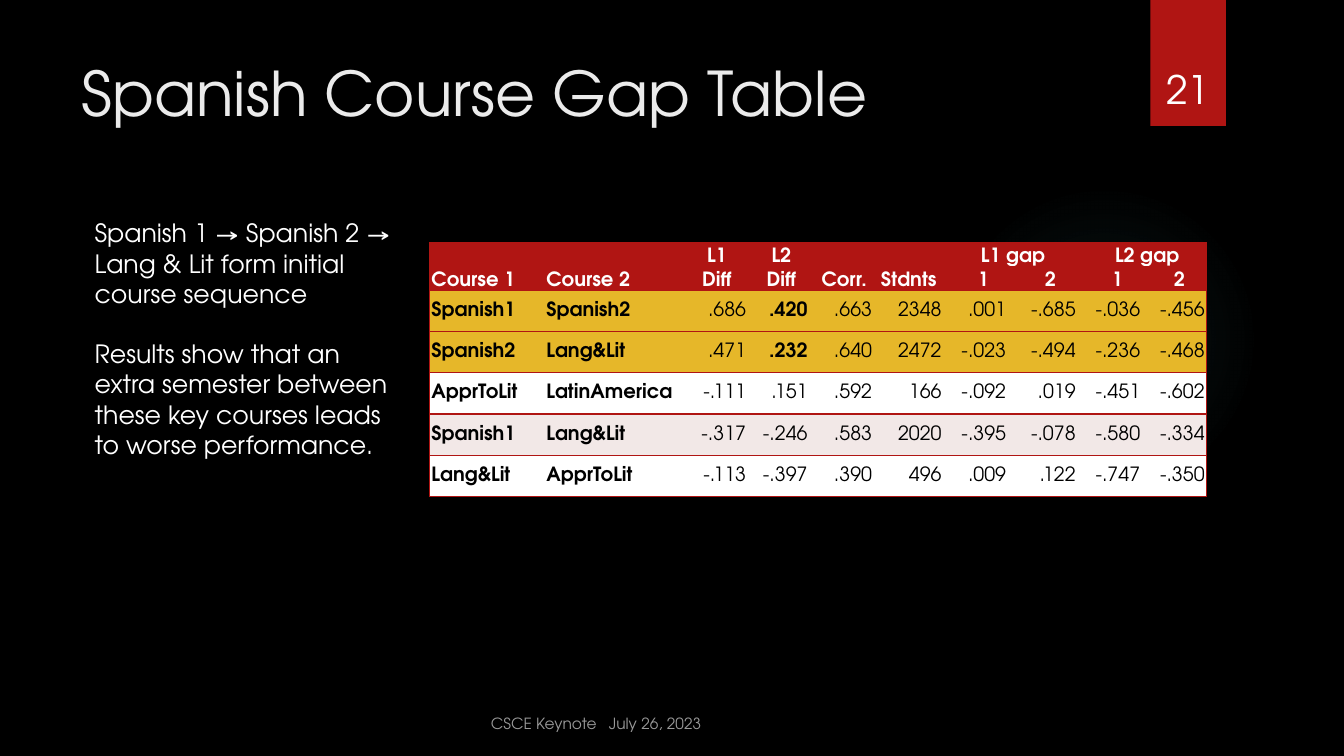
"""Build the Spanish Course Gap Table slide."""
from lxml import etree
from pptx import Presentation
from pptx.dml.color import RGBColor
from pptx.enum.shapes import MSO_SHAPE
from pptx.enum.text import MSO_ANCHOR, PP_ALIGN
from pptx.oxml import parse_xml
from pptx.oxml.ns import nsdecls, qn
from pptx.util import Inches, Pt

LEFT, CENTER, RIGHT = PP_ALIGN.LEFT, PP_ALIGN.CENTER, PP_ALIGN.RIGHT
TOP, MIDDLE, BOTTOM = MSO_ANCHOR.TOP, MSO_ANCHOR.MIDDLE, MSO_ANCHOR.BOTTOM
FONT = "TeX Gyre Adventor"
BLACK = RGBColor(0x00, 0x00, 0x00)
WHITE = RGBColor(0xFF, 0xFF, 0xFF)
OFF_WHITE = RGBColor(0xEB, 0xEB, 0xEB)
GRAY = RGBColor(0x99, 0x99, 0x99)
RED = RGBColor(0xB0, 0x15, 0x13)
GOLD = RGBColor(0xE6, 0xB7, 0x29)
PINK = RGBColor(0xF2, 0xE8, 0xE7)
GLOW_COLOR = RGBColor(0x50, 0xB9, 0xC1)
GLOW_STOPS = [(0, 7), (36, 6), (69, 0)]

TITLE = "Spanish Course Gap Table"
SLIDE_NUMBER = "21"
FOOTER = "CSCE Keynote\tJuly 26, 2023"
FOOTER_TAB = 1.17
FINDINGS = [
    "Spanish 1 → Spanish 2 → Lang & Lit form initial course sequence",
    "Results show that an extra semester between these key courses leads to worse performance.",
]
HEADERS = [
    ["", "", "L1", "L2", "", "", "L1 gap", "", "L2 gap", ""],
    ["Course 1", "Course 2", "Diff", "Diff", "Corr.", "Stdnts", "1", "2", "1", "2"],
]
HEADER_SHIFTS = [
    [0, 0, 1, 1, 0, 0, 1, 0, 2, 0],
    [0, 0, 1, 1, 1, 0, 3, 3, 3, 2],
]
COURSES = [
    ["Spanish1", "Spanish2", ".686", ".420", ".663", "2348", ".001", "-.685", "-.036", "-.456"],
    ["Spanish2", "Lang&Lit", ".471", ".232", ".640", "2472", "-.023", "-.494", "-.236", "-.468"],
    ["ApprToLit", "LatinAmerica", "-.111", ".151", ".592", "166", "-.092", ".019", "-.451", "-.602"],
    ["Spanish1", "Lang&Lit", "-.317", "-.246", ".583", "2020", "-.395", "-.078", "-.580", "-.334"],
    ["Lang&Lit", "ApprToLit", "-.113", "-.397", ".390", "496", ".009", ".122", "-.747", "-.350"],
]
COURSE_FILLS = [GOLD, GOLD, WHITE, PINK, WHITE]
HIGHLIGHTS = {".420", ".232"}
MERGED_COLUMNS = [(6, 7), (8, 9)]
COLUMN_WIDTHS = [1.14, 1.35, 0.67, 0.61, 0.64, 0.69, 0.64, 0.69, 0.64, 0.64]
ROW_HEIGHTS = [0.07, 0.23] + [0.41] * len(COURSES)
TABLE_BOX = (4.26, 2.41, 7.7, 2.53)
CELL_INSET, SHIFT_STEP = 0.02, 0.05


def add_run(paragraph, text, size, color, bold=False):
    run = paragraph.add_run()
    run.text = text
    run.font.name, run.font.size = FONT, Pt(size)
    run.font.color.rgb, run.font.bold = color, bold


def add_text(slide, box, texts, size, color, align=LEFT, anchor=TOP, gap=0):
    frame = slide.shapes.add_textbox(*map(Inches, box)).text_frame
    frame.word_wrap, frame.vertical_anchor = True, anchor
    for index, text in enumerate(texts):
        paragraph = frame.add_paragraph() if index else frame.paragraphs[0]
        paragraph.alignment = align
        if index:
            paragraph.space_before = Pt(gap)
        add_run(paragraph, text, size, color)
    return frame


def add_plain_shape(slide, kind, box):
    shape = slide.shapes.add_shape(kind, *map(Inches, box))
    shape.shadow.inherit = False
    shape.line.fill.background()
    return shape


def add_glow(slide):
    shape = add_plain_shape(slide, MSO_SHAPE.OVAL, (9.41, 1.83, 3.08, 3.08))
    stops = "".join(
        f'<a:gs pos="{position * 1000}"><a:srgbClr val="{GLOW_COLOR}">'
        f'<a:alpha val="{alpha * 1000}"/></a:srgbClr></a:gs>'
        for position, alpha in GLOW_STOPS)
    gradient = parse_xml(
        f'<a:gradFill {nsdecls("a")}><a:gsLst>{stops}</a:gsLst><a:path path="circle">'
        '<a:fillToRect l="50000" t="50000" r="50000" b="50000"/></a:path></a:gradFill>')
    shape.element.spPr.find(qn("a:prstGeom")).addnext(gradient)


def set_borders(cell, column):
    visible = {"L": column == 0, "R": column == len(COLUMN_WIDTHS) - 1, "T": True, "B": True}
    properties = cell._tc.get_or_add_tcPr()
    for index, (side, shown) in enumerate(visible.items()):
        paint = f'<a:solidFill><a:srgbClr val="{RED}"/></a:solidFill>' if shown else "<a:noFill/>"
        properties.insert(index, parse_xml(
            f'<a:ln{side} {nsdecls("a")} w="12700">{paint}</a:ln{side}>'))


def fill_cell(cell, column, text, fill, color, bold, align, anchor, shift=0):
    cell.margin_left = Inches(CELL_INSET + shift * SHIFT_STEP)
    cell.margin_right = Inches(CELL_INSET)
    cell.margin_top = cell.margin_bottom = 0
    cell.vertical_anchor = anchor
    cell.fill.solid()
    cell.fill.fore_color.rgb = fill
    set_borders(cell, column)
    paragraph = cell.text_frame.paragraphs[0]
    paragraph.alignment = align
    if text:
        add_run(paragraph, text, 14, color, bold)
    else:
        etree.SubElement(paragraph._p, qn("a:endParaRPr"), sz="1400")


def add_gap_table(slide):
    frame = slide.shapes.add_table(
        len(ROW_HEIGHTS), len(COLUMN_WIDTHS), *map(Inches, TABLE_BOX))
    table = frame.table
    table.first_row = table.horz_banding = False
    for column, width in enumerate(COLUMN_WIDTHS):
        table.columns[column].width = Inches(width)
    for row, height in enumerate(ROW_HEIGHTS):
        table.rows[row].height = Inches(height)
    frame.height = Inches(TABLE_BOX[3])
    for row, (texts, shifts) in enumerate(zip(HEADERS, HEADER_SHIFTS)):
        for column, (text, shift) in enumerate(zip(texts, shifts)):
            fill_cell(table.cell(row, column), column, text, RED, WHITE, True,
                      LEFT if column < 2 else CENTER, BOTTOM, shift)
    for row, (texts, fill) in enumerate(zip(COURSES, COURSE_FILLS), len(HEADERS)):
        for column, text in enumerate(texts):
            fill_cell(table.cell(row, column), column, text, fill, BLACK,
                      column < 2 or text in HIGHLIGHTS,
                      LEFT if column < 2 else RIGHT, MIDDLE)
    for first, last in MERGED_COLUMNS:
        table.cell(0, first).merge(table.cell(0, last))


def main():
    presentation = Presentation()
    presentation.slide_width, presentation.slide_height = Inches(13.33), Inches(7.5)
    slide = presentation.slides.add_slide(presentation.slide_layouts[6])
    slide.background.fill.solid()
    slide.background.fill.fore_color.rgb = BLACK
    add_glow(slide)
    ribbon = add_plain_shape(slide, MSO_SHAPE.RECTANGLE, (11.41, 0, 0.75, 1.25))
    ribbon.fill.solid()
    ribbon.fill.fore_color.rgb = RED
    add_text(slide, (0.71, 0.5, 10.29, 1.53), [TITLE], 44, OFF_WHITE)
    add_gap_table(slide)
    footer = add_text(slide, (4.77, 6.99, 4.22, 0.33), [FOOTER], 11, GRAY, anchor=BOTTOM)
    tabs = etree.SubElement(footer.paragraphs[0]._p.get_or_add_pPr(), qn("a:tabLst"))
    etree.SubElement(tabs, qn("a:tab"), pos=str(Inches(FOOTER_TAB)), algn="l")
    add_text(slide, (11.32, 0.32, 0.92, 0.84), [SLIDE_NUMBER], 28, WHITE, CENTER, BOTTOM)
    add_text(slide, (0.84, 2.11, 3.19, 2.83), FINDINGS, 18, WHITE, gap=21.5)
    presentation.save("out.pptx")


if __name__ == "__main__":
    main()
